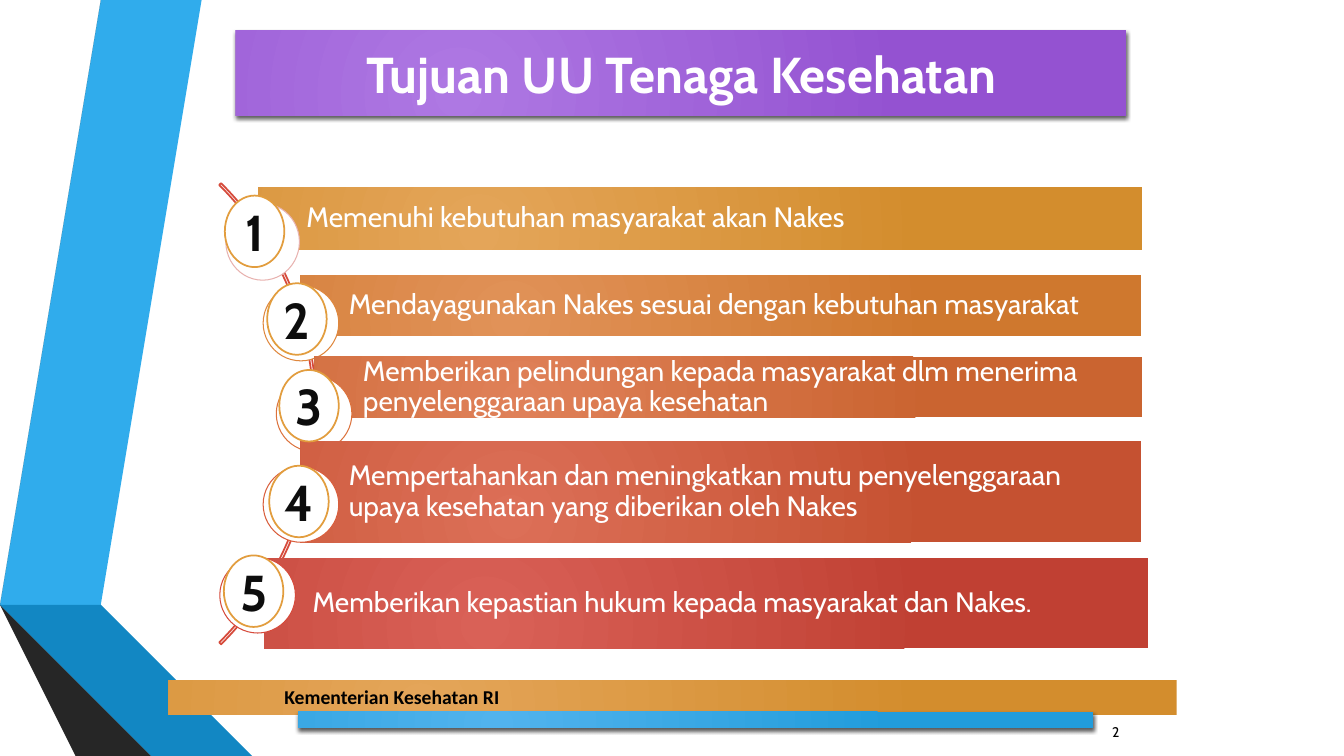
import pptx
import pptx.util
import pptx.dml.color
import pptx.enum.shapes
import pptx.enum.text
import pptx.oxml
from lxml import etree

Inches = pptx.util.Inches
Pt = pptx.util.Pt
RGBColor = pptx.dml.color.RGBColor
SHAPE = pptx.enum.shapes.MSO_SHAPE
ALIGN = pptx.enum.text.PP_ALIGN
ANCHOR = pptx.enum.text.MSO_ANCHOR
A = "http://schemas.openxmlformats.org/drawingml/2006/main"

WHITE = RGBColor(0xFF, 0xFF, 0xFF)
BLACK = RGBColor(0, 0, 0)
NUMBER_INK = RGBColor(0x0D, 0x0D, 0x0D)
AMBER = RGBColor(0xE2, 0x9D, 0x3E)
ARC_RED = RGBColor(0xD6, 0x4A, 0x3B)
PURPLE_BLEND = RGBColor(0xAE, 0x78, 0xE3), RGBColor(0x94, 0x52, 0xD1)
AMBER_BLEND = RGBColor(0xE4, 0xA5, 0x59), RGBColor(0xD3, 0x8D, 0x2D)
BLUE_BLEND = RGBColor(0x51, 0xB3, 0xED), RGBColor(0x21, 0x9C, 0xDB)

TITLE = "Tujuan UU Tenaga Kesehatan"
MINISTRY = "Kementerian Kesehatan RI"
PAGE = "2"

RIBBONS = [
    (RGBColor(0x30, 0xAC, 0xEC), [(0.5, 5.78), (0.77, 5.83), (1.73, 0), (1.45, 0)]),
    (RGBColor(0x59, 0x59, 0x59), [(1.39, 0), (1.11, 0), (0.16, 5.73), (0.44, 5.77)]),
    (RGBColor(0x26, 0x26, 0x26), [(0.16, 5.73), (1.45, 7.5), (1.51, 7.5)]),
    (RGBColor(0x0C, 0x5A, 0x82), [(0.5, 5.79), (2.08, 7.5), (2.14, 7.5)]),
    (RGBColor(0x12, 0x87, 0xC3), [(0.5, 5.79), (2.14, 7.5), (2.83, 7.5), (0.77, 5.83), (0.5, 5.78)]),
    (RGBColor(0x40, 0x40, 0x40), [(2.02, 7.5), (0.48, 5.83), (0.43, 5.78), (0.44, 5.77),
                                  (0.16, 5.73), (1.51, 7.5)]),
]

# goal, bar box, bar blend, ring box, ring line, badge corner
GOALS = [
    ("Memenuhi kebutuhan masyarakat akan Nakes", (2.56, 1.86, 8.77, 0.62), AMBER_BLEND,
     (2.24, 2.02, 0.73, 0.76), RGBColor(0xE8, 0xB2, 0xAF), (2.23, 1.94)),
    ("Mendayagunakan Nakes sesuai dengan kebutuhan masyarakat", (2.98, 2.73, 8.34, 0.6),
     (RGBColor(0xE1, 0x92, 0x58), RGBColor(0xCF, 0x78, 0x2E)),
     (2.61, 2.83, 0.75, 0.75), RGBColor(0xDF, 0x87, 0x3D), (2.65, 2.81)),
    ("Memberikan pelindungan kepada masyarakat dlm menerima penyelenggaraan upaya kesehatan",
     (3.12, 3.54, 8.21, 0.6), (RGBColor(0xDF, 0x80, 0x58), RGBColor(0xCA, 0x64, 0x30)),
     (2.74, 3.73, 0.75, 0.75), RGBColor(0xDC, 0x72, 0x3C), (2.77, 3.67)),
    ("Mempertahankan dan meningkatkan mutu penyelenggaraan upaya kesehatan yang diberikan oleh Nakes",
     (2.98, 4.38, 8.34, 1), (RGBColor(0xDC, 0x6F, 0x57), RGBColor(0xC5, 0x51, 0x31)),
     (2.61, 4.63, 0.75, 0.75), RGBColor(0xD9, 0x5E, 0x3C), (2.67, 4.62)),
    ("Memberikan kepastian hukum kepada masyarakat dan Nakes.", (2.62, 5.54, 8.77, 0.89),
     (RGBColor(0xD9, 0x61, 0x57), RGBColor(0xC0, 0x40, 0x33)),
     (2.18, 5.53, 0.75, 0.75), ARC_RED, (2.22, 5.51)),
]
BADGE_SIZE = 0.59, 0.71


def blend_fill(shape, blend):
    shape.fill.gradient()
    for stop, color in zip(shape.fill.gradient_stops, blend):
        stop.color.rgb = color
    gradient = shape.element.spPr.find(f"{{{A}}}gradFill")
    gradient.replace(gradient.find(f"{{{A}}}lin"), pptx.oxml.parse_xml(
        f'<a:path xmlns:a="{A}" path="circle">'
        '<a:fillToRect l="50000" t="100000" r="100000" b="50000"/></a:path>'))


def cast_shadow(shape):
    shape.shadow.inherit = False
    effects = shape.element.spPr.find(f"{{{A}}}effectLst")
    shadow = etree.SubElement(effects, f"{{{A}}}outerShdw", blurRad=str(Pt(3)),
                              dist=str(Pt(2)), dir="5400000", rotWithShape="0")
    color = etree.SubElement(shadow, f"{{{A}}}srgbClr", val=str(BLACK))
    etree.SubElement(color, f"{{{A}}}alpha", val="64000")


def add_part(kind, box, blend=None, line=None, width=0.75):
    shape = slide.shapes.add_shape(kind, *map(Inches, box))
    shape.shadow.inherit = False
    if blend:
        blend_fill(shape, blend)
    else:
        shape.fill.solid()
        shape.fill.fore_color.rgb = WHITE
    if line:
        shape.line.color.rgb = line
        shape.line.width = Pt(width)
    else:
        shape.line.fill.background()
    return shape


def write(shape, text, size, color, align=ALIGN.LEFT, bold=False, font="Cabin",
          anchor=ANCHOR.MIDDLE, wrap=True):
    frame = shape.text_frame
    frame.text = text
    frame.word_wrap = wrap
    frame.vertical_anchor = anchor
    paragraph = frame.paragraphs[0]
    paragraph.alignment = align
    paragraph.font.size = Pt(size)
    paragraph.font.name = font
    paragraph.font.bold = bold
    paragraph.font.color.rgb = color
    return frame


deck = pptx.Presentation()
deck.slide_width, deck.slide_height = Inches(13.33), Inches(7.5)
slide = deck.slides.add_slide(deck.slide_layouts[5])

title = slide.shapes.title
title.left, title.top, title.width, title.height = map(Inches, (2.34, 0.3, 8.83, 0.85))
blend_fill(title, PURPLE_BLEND)
cast_shadow(title)
write(title, TITLE, 36, WHITE, ALIGN.CENTER, True)

for color, points in RIBBONS:
    builder = slide.shapes.build_freeform(*points[0], scale=Inches(1))
    builder.add_line_segments(points[1:], close=True)
    ribbon = builder.convert_to_shape()
    ribbon.shadow.inherit = False
    ribbon.fill.solid()
    ribbon.fill.fore_color.rgb = color
    ribbon.line.fill.background()

arc = add_part(SHAPE.BLOCK_ARC, (-3.33, 0.87, 6.47, 6.47), line=ARC_RED, width=1.25)
arc.fill.background()
for index, value in enumerate((189, 27, 0.004)):
    arc.adjustments[index] = value

for goal, bar_box, blend, ring_box, ring_line, corner in GOALS:
    bar = add_part(SHAPE.RECTANGLE, bar_box, blend)
    frame = write(bar, goal, 20, WHITE)
    frame.margin_left = Inches(0.48)
    frame.margin_top = frame.margin_right = frame.margin_bottom = Inches(0.06)
    frame.paragraphs[0].line_spacing = 0.9
    add_part(SHAPE.OVAL, ring_box, line=ring_line)

page_number = slide.shapes.add_textbox(*map(Inches, (8.87, 7.06, 2.33, 0.4)))
write(page_number, PAGE, 10, BLACK, ALIGN.RIGHT)

ministry_bar = add_part(SHAPE.RECTANGLE, (1.67, 6.75, 10, 0.34), AMBER_BLEND)
ministry = write(ministry_bar, MINISTRY, 14, BLACK, bold=True, font="Calibri", anchor=ANCHOR.TOP)
ministry.margin_left = Inches(1.15)
cast_shadow(add_part(SHAPE.RECTANGLE, (2.96, 7.06, 7.88, 0.16), BLUE_BLEND))

for number, goal in enumerate(GOALS, 1):
    badge = add_part(SHAPE.OVAL, goal[-1] + BADGE_SIZE, line=AMBER, width=1.25)
    write(badge, str(number), 36, NUMBER_INK, ALIGN.CENTER, True, wrap=False)

deck.save("out.pptx")
